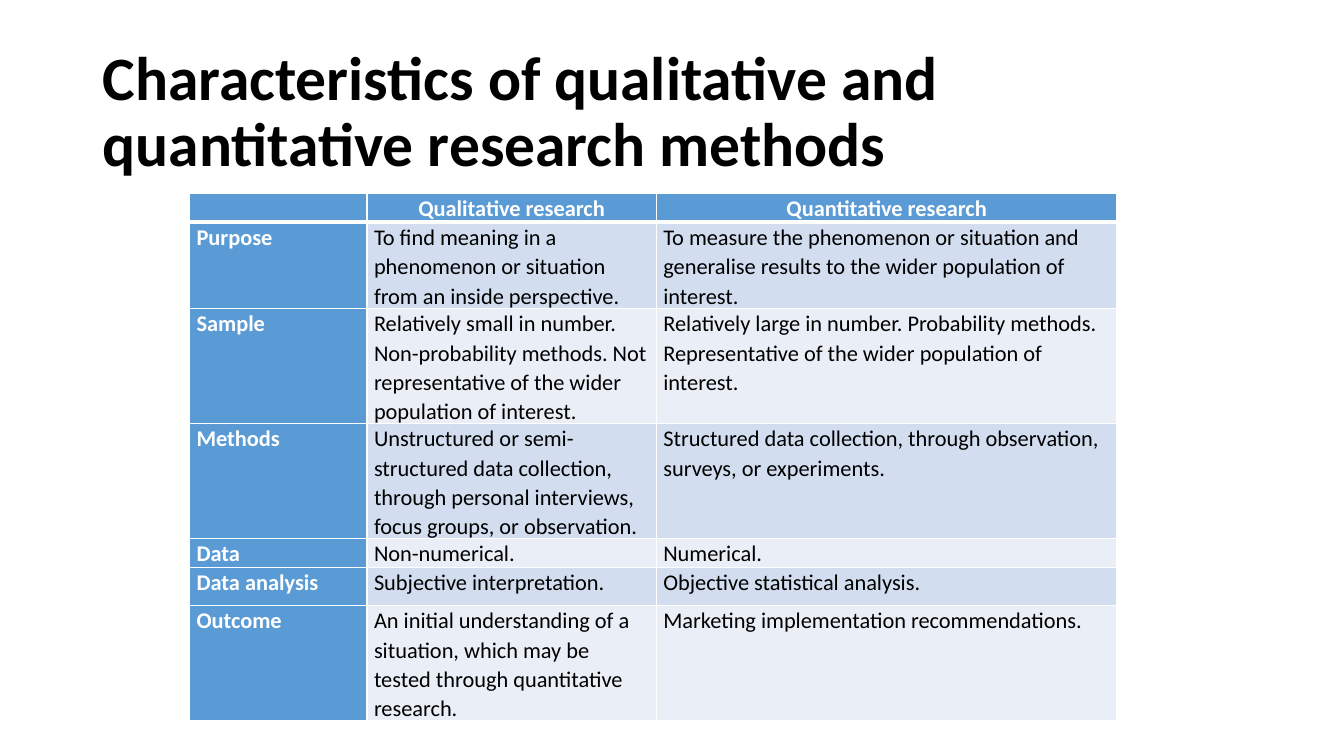
from lxml import etree
from pptx import Presentation
from pptx.dml.color import RGBColor
from pptx.enum.text import MSO_ANCHOR, PP_ALIGN
from pptx.oxml.ns import qn
from pptx.util import Inches, Pt

CENTER, LEFT = PP_ALIGN.CENTER, PP_ALIGN.LEFT
MIDDLE = MSO_ANCHOR.MIDDLE
BLACK = RGBColor(0x00, 0x00, 0x00)
WHITE = RGBColor(0xFF, 0xFF, 0xFF)
BLUE = RGBColor(0x5B, 0x9B, 0xD5)
BANDS = [RGBColor(0xEA, 0xEF, 0xF7), RGBColor(0xD2, 0xDE, 0xEF)]
FONT = "Calibri"

COLS = [1.76, 2.87, 4.57]
ROWS = [0.19, 0.76, 1.14, 1.14, 0.19, 0.38, 0.95]
TEXTS = [
    ("", "Qualitative research", "Quantitative research"),
    ("Purpose",
     "To find meaning in a phenomenon or situation from an inside perspective.",
     "To measure the phenomenon or situation and generalise results to the wider population of interest."),
    ("Sample",
     "Relatively small in number. Non-probability methods. Not representative of the wider population of interest.",
     "Relatively large in number. Probability methods. Representative of the wider population of interest."),
    ("Methods",
     "Unstructured or semi-structured data collection, through personal interviews, focus groups, or observation.",
     "Structured data collection, through observation, surveys, or experiments."),
    ("Data", "Non-numerical.", "Numerical."),
    ("Data analysis", "Subjective interpretation.", "Objective statistical analysis."),
    ("Outcome",
     "An initial understanding of a situation, which may be tested through quantitative research.",
     "Marketing implementation recommendations."),
]


def style_paragraph(p, size, color, bold, spacing):
    p.line_spacing = spacing
    p.font.name = FONT
    p.font.size = Pt(size)
    p.font.bold = bold
    p.font.color.rgb = color


def add_border(cell, side, width):
    ln = etree.SubElement(cell._tc.get_or_add_tcPr(), qn("a:" + side), w=str(Pt(width)))
    fill = etree.SubElement(ln, qn("a:solidFill"))
    etree.SubElement(fill, qn("a:srgbClr"), val=str(WHITE))


prs = Presentation()
prs.slide_width, prs.slide_height = Inches(13.33), Inches(7.5)
s = prs.slides.add_slide(prs.slide_layouts[6])

title = s.shapes.add_textbox(Inches(0.92), Inches(0.4), Inches(11.5), Inches(1.45))
tf = title.text_frame
tf.word_wrap = True
tf.vertical_anchor = MIDDLE
p = tf.paragraphs[0]
p.text = "Characteristics of qualitative and quantitative research methods"
style_paragraph(p, 44, BLACK, True, 0.9)

table = s.shapes.add_table(len(ROWS), len(COLS), Inches(1.88), Inches(1.92),
                           Inches(sum(COLS)), Inches(sum(ROWS))).table
table.first_col = True
for column, width in zip(table.columns, COLS):
    column.width = Inches(width)

for i, (height, texts) in enumerate(zip(ROWS, TEXTS)):
    table.rows[i].height = Inches(height)
    for j, text in enumerate(texts):
        cell = table.cell(i, j)
        heading = i == 0 or j == 0
        for side in ("lnL", "lnR", "lnT", "lnB"):
            thick = (i, side) in ((0, "lnB"), (1, "lnT"))
            add_border(cell, side, 3 if thick else 1)
        cell.fill.solid()
        cell.fill.fore_color.rgb = BLUE if heading else BANDS[i % 2]
        cell.margin_left = cell.margin_right = Inches(0.07)
        cell.margin_top = cell.margin_bottom = 0
        p = cell.text_frame.paragraphs[0]
        p.text = text
        p.alignment = CENTER if i == 0 else LEFT
        style_paragraph(p, 16, WHITE if heading else BLACK, heading, 1.07)

prs.save("out.pptx")
